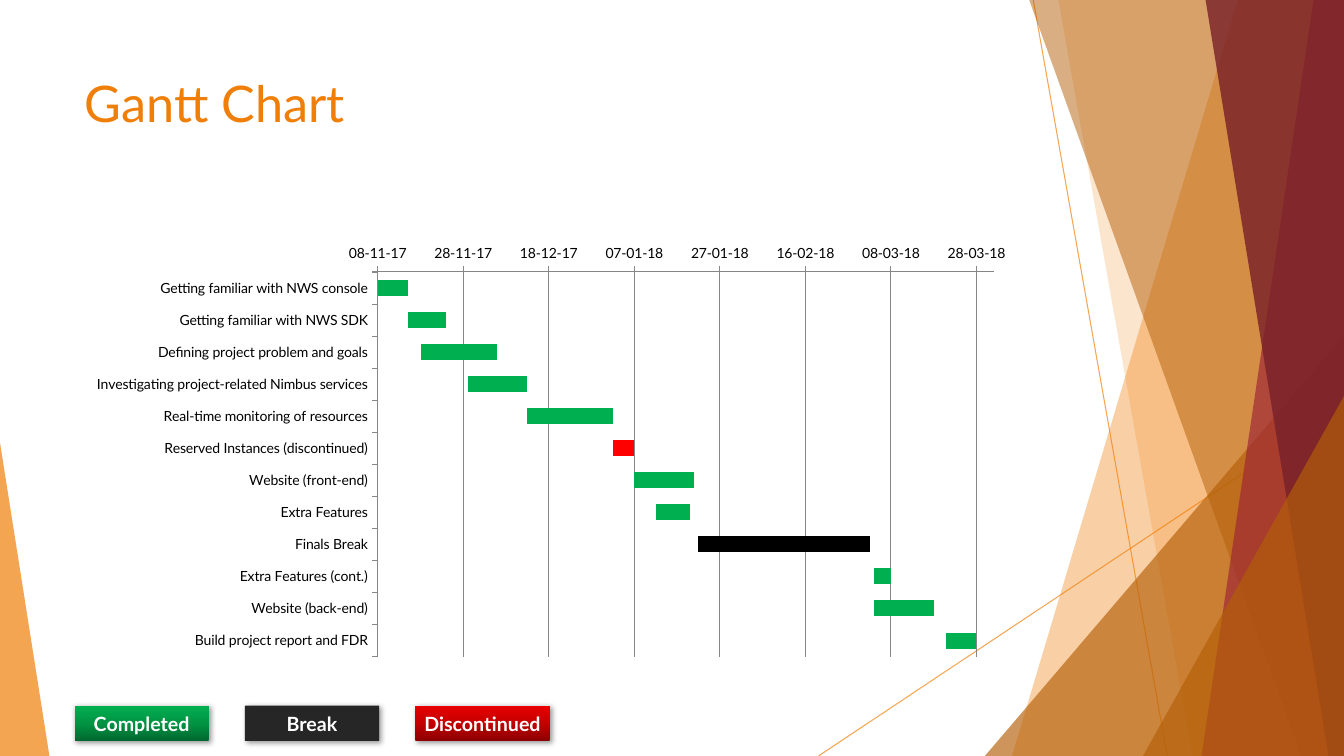
from copy import deepcopy

from lxml.etree import SubElement
from pptx import Presentation
from pptx.chart.data import CategoryChartData
from pptx.dml.color import RGBColor
from pptx.enum.chart import XL_CHART_TYPE, XL_TICK_LABEL_POSITION, XL_TICK_MARK
from pptx.enum.shapes import MSO_CONNECTOR, MSO_SHAPE
from pptx.enum.text import MSO_ANCHOR, PP_ALIGN
from pptx.oxml import parse_xml
from pptx.oxml.ns import nsdecls, qn
from pptx.util import Inches, Pt

WIDTH, HEIGHT = Inches(13.33), Inches(7.5)
COLUMN, ROW = WIDTH / 100, HEIGHT / 100
LEFT, CONTENT_WIDTH = 5.55, 70.5
FONT = "Lato"

ORANGE = RGBColor(0xF0, 0x7F, 0x09)
BROWN = RGBColor(0xB4, 0x5F, 0x07)
RED = RGBColor(0x9F, 0x29, 0x36)
MAROON = RGBColor(0x77, 0x1F, 0x28)
WHITE = RGBColor(0xFF, 0xFF, 0xFF)
BLACK = RGBColor(0x00, 0x00, 0x00)
GRAY = RGBColor(0x86, 0x86, 0x86)
CHARCOAL = RGBColor(0x26, 0x26, 0x26)
DONE = RGBColor(0x00, 0xB0, 0x50)
DROPPED = RGBColor(0xFF, 0x00, 0x00)
GREENS = [RGBColor(0x00, 0x68, 0x2F), RGBColor(0x00, 0x94, 0x43), DONE]
REDS = [RGBColor(0x8B, 0x00, 0x00), RGBColor(0xC5, 0x00, 0x00), RGBColor(0xEA, 0x00, 0x00)]

TASKS = [
    ("Getting familiar with NWS console", 43047, 7, DONE),
    ("Getting familiar with NWS SDK", 43054, 9, DONE),
    ("Defining project problem and goals", 43057, 18, DONE),
    ("Investigating project-related Nimbus services", 43068, 14, DONE),
    ("Real-time monitoring of resources", 43082, 20, DONE),
    ("Reserved Instances (discontinued)", 43102, 5, DROPPED),
    ("Website (front-end)", 43107, 14, DONE),
    ("Extra Features", 43112, 8, DONE),
    ("Finals Break", 43122, 40, BLACK),
    ("Extra Features (cont.)", 43163, 4, DONE),
    ("Website (back-end)", 43163, 14, DONE),
    ("Build project report and FDR", 43180, 7, DONE),
]
LEGEND = [("Completed", GREENS), ("Break", [CHARCOAL]), ("Discontinued", REDS)]


def across(columns):
    return round(columns * COLUMN)


def down(rows):
    return round(rows * ROW)


def area(left, top, width, height):
    return across(left), down(top), across(width), down(height)


def apply(target, values):
    for name, value in values.items():
        setattr(target, name, value)


def style_font(font, size, color, bold=False):
    apply(font, {"name": FONT, "size": Pt(size), "bold": bold})
    font.color.rgb = color


def set_alpha(fill_owner, percent):
    for color in fill_owner.iter(qn("a:srgbClr")):
        SubElement(color, qn("a:alpha"), val=str(percent * 1000))


def paint_glass(shape, color, percent):
    shape.shadow.inherit = False
    shape.fill.solid()
    shape.fill.fore_color.rgb = color
    shape.line.fill.background()
    set_alpha(shape.element.spPr, percent)


def add_ray(page, start, end):
    ray = page.shapes.add_connector(
        MSO_CONNECTOR.STRAIGHT, across(start[0]), down(start[1]), across(end[0]), down(end[1]))
    ray.line.width = Pt(0.75)
    ray.line.color.rgb = ORANGE
    set_alpha(ray.line._get_or_add_ln(), 70)
    SubElement(ray.element.spPr, qn("a:effectLst"))


def add_facet(page, top, bottom, color, percent):
    corners = [(100, 0), (100, 100), (bottom, 100)]
    builder = page.shapes.build_freeform(across(top), 0)
    builder.add_line_segments([(across(x), down(y)) for x, y in corners], close=True)
    paint_glass(builder.convert_to_shape(), color, percent)


def add_wedge(page, left, top, width, apex, color, percent):
    wedge = page.shapes.add_shape(
        MSO_SHAPE.ISOSCELES_TRIANGLE, *area(left, top, width, 100 - top))
    wedge.adjustments[0] = apex
    paint_glass(wedge, color, percent)


def add_backdrop(page):
    add_ray(page, (76.88, 0), (86.85, 100))
    add_ray(page, (100, 53.73), (60.9, 100))
    add_facet(page, 92.1, 75.3, ORANGE, 36)
    add_facet(page, 78.75, 88.73, ORANGE, 20)
    add_wedge(page, 73.28, 44.4, 26.72, 1, BROWN, 66)
    add_facet(page, 76.58, 96.83, BROWN, 50)
    add_facet(page, 97.73, 89.4, RED, 70)
    add_facet(page, 89.7, 98.85, MAROON, 80)
    add_wedge(page, 85.05, 52.4, 14.95, 1, BROWN, 66)
    add_wedge(page, 0, 58.53, 3.68, 0, ORANGE, 70)


def add_title(page, text):
    title = page.shapes.title
    left, top, width, height = area(LEFT, 8.93, CONTENT_WIDTH, 19.2)
    apply(title, {"left": left, "top": top, "width": width, "height": height})
    title.text_frame.vertical_anchor = MSO_ANCHOR.TOP
    para = title.text_frame.paragraphs[0]
    para.alignment = PP_ALIGN.LEFT
    span = para.add_run()
    span.text = text
    style_font(span.font, 36, ORANGE)


def paint_gradient(fill, colors):
    fill.gradient()
    fill.gradient_angle = 90
    stops = fill._fill._gradFill.find(qn("a:gsLst"))
    stops.insert(1, deepcopy(stops[0]))
    for index, (stop, color) in enumerate(zip(fill.gradient_stops, colors)):
        stop.color.rgb = color
        stop.position = index / (len(colors) - 1)


def add_tag(page, column, text, colors):
    tag = page.shapes.add_shape(MSO_SHAPE.RECTANGLE, *area(column, 93.33, 9.98, 4.67))
    if len(colors) > 1:
        paint_gradient(tag.fill, colors)
    else:
        tag.fill.solid()
        tag.fill.fore_color.rgb = colors[0]
    tag.line.fill.background()
    tag.shadow.inherit = False
    tag.element.spPr.find(qn("a:effectLst")).append(parse_xml(
        f'<a:outerShdw {nsdecls("a")} blurRad="{Pt(4)}" dist="{Pt(2)}" dir="2700000">'
        '<a:srgbClr val="000000"><a:alpha val="40000"/></a:srgbClr></a:outerShdw>'))
    frame = tag.text_frame
    apply(frame, {"margin_left": 0, "margin_right": 0, "margin_top": 0, "margin_bottom": 0,
                  "vertical_anchor": MSO_ANCHOR.MIDDLE, "word_wrap": True})
    para = frame.paragraphs[0]
    para.alignment = PP_ALIGN.CENTER
    span = para.add_run()
    span.text = text
    style_font(span.font, 14, WHITE, True)


def style_line(line):
    line.color.rgb = GRAY
    line.width = Pt(0.75)


def add_gantt(page):
    names, starts, days, colors = zip(*TASKS)
    data = CategoryChartData()
    data.categories = names
    data.add_series("Series 1", starts)
    data.add_series("Series 2", days)
    chart = page.shapes.add_chart(
        XL_CHART_TYPE.BAR_STACKED, *area(LEFT, 31.47, CONTENT_WIDTH, 56.53), data).chart
    apply(chart, {"has_legend": False, "has_title": False})
    style_font(chart.font, 10, BLACK)
    plot = chart.plots[0]
    apply(plot, {"gap_width": 100, "overlap": 100, "vary_by_categories": False})
    offset, bars = plot.series
    offset.format.fill.background()
    for index, color in enumerate(colors):
        fill = bars.points[index].format.fill
        fill.solid()
        fill.fore_color.rgb = color
    ticks = {"major_tick_mark": XL_TICK_MARK.OUTSIDE, "minor_tick_mark": XL_TICK_MARK.NONE,
             "tick_label_position": XL_TICK_LABEL_POSITION.NEXT_TO_AXIS}
    apply(chart.category_axis, {**ticks, "reverse_order": True, "has_major_gridlines": False})
    apply(chart.value_axis, {**ticks, "minimum_scale": 43047, "maximum_scale": 43191,
                             "major_unit": 20, "has_major_gridlines": True})
    apply(chart.value_axis.tick_labels,
          {"number_format": r"dd\-mm\-yy", "number_format_is_linked": False})
    for owner in (chart.category_axis, chart.value_axis, chart.value_axis.major_gridlines):
        style_line(owner.format.line)
    place_plot(chart, {"x": 0.32, "y": 0.08, "w": 0.65, "h": 0.9})


def place_plot(chart, shares):
    plot_area = chart.element.chart.plotArea
    for layout in plot_area.findall(qn("c:layout")):
        plot_area.remove(layout)
    modes = {"layoutTarget": "inner", "xMode": "edge", "yMode": "edge"}
    items = "".join(f'<c:{name} val="{value}"/>' for name, value in {**modes, **shares}.items())
    plot_area.insert(0, parse_xml(
        f'<c:layout {nsdecls("c")}><c:manualLayout>{items}</c:manualLayout></c:layout>'))


def main():
    deck = Presentation()
    apply(deck, {"slide_width": WIDTH, "slide_height": HEIGHT})
    page = deck.slides.add_slide(deck.slide_layouts[5])
    add_backdrop(page)
    add_title(page, "Gantt Chart")
    for index, (text, colors) in enumerate(LEGEND):
        add_tag(page, LEFT + index * 12.68, text, colors)
    add_gantt(page)
    deck.save("out.pptx")


if __name__ == "__main__":
    main()
